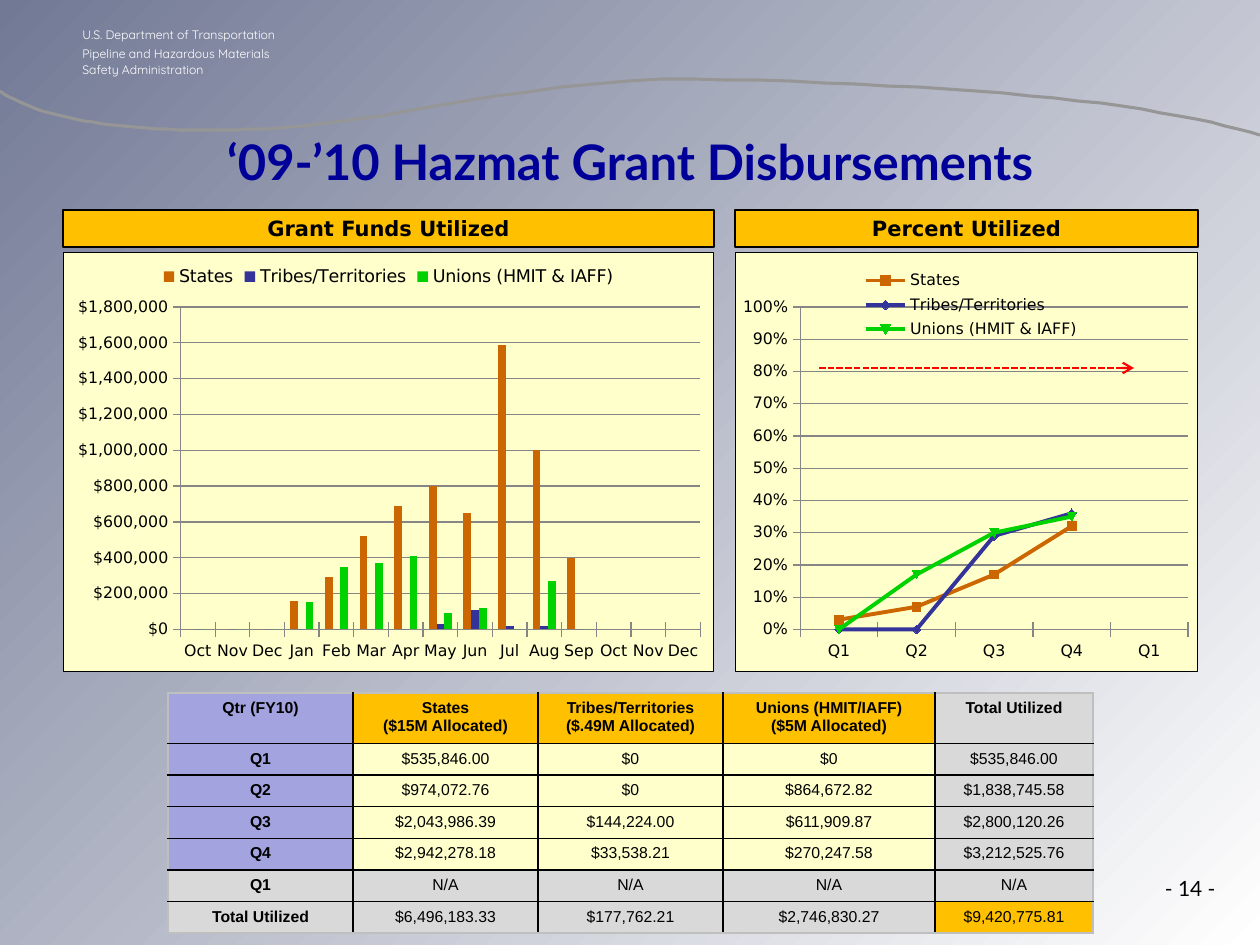
from dataclasses import dataclass
from typing import Optional

from lxml import etree
from pptx import Presentation
from pptx.chart.data import CategoryChartData
from pptx.dml.color import RGBColor
from pptx.enum.chart import XL_CHART_TYPE, XL_LEGEND_POSITION, XL_MARKER_STYLE, XL_TICK_MARK
from pptx.enum.dml import MSO_LINE
from pptx.enum.shapes import MSO_CONNECTOR, MSO_SHAPE
from pptx.enum.text import MSO_ANCHOR, PP_ALIGN
from pptx.oxml import parse_xml
from pptx.oxml.ns import nsdecls, qn
from pptx.util import Emu, Pt

PX = 914400 / 126
COLUMNS, LINES = XL_CHART_TYPE.COLUMN_CLUSTERED, XL_CHART_TYPE.LINE_MARKERS
LEFT, CENTER, RIGHT = PP_ALIGN.LEFT, PP_ALIGN.CENTER, PP_ALIGN.RIGHT
TOP, MIDDLE, BOTTOM = MSO_ANCHOR.TOP, MSO_ANCHOR.MIDDLE, MSO_ANCHOR.BOTTOM
RECTANGLE = MSO_SHAPE.RECTANGLE
LEGEND_TOP = XL_LEGEND_POSITION.TOP
AUTO_MARKER = XL_MARKER_STYLE.AUTOMATIC
CROSS = XL_TICK_MARK.CROSS
SHORT_DASH = MSO_LINE.SQUARE_DOT

BLACK = RGBColor(0x00, 0x00, 0x00)
WHITE = RGBColor(0xFF, 0xFF, 0xFF)
SLATE = RGBColor(0x72, 0x79, 0x95)
CURVE_GREY = RGBColor(0x96, 0x96, 0x96)
GRID_GREY = RGBColor(0x86, 0x86, 0x86)
EDGE_GREY = RGBColor(0xBF, 0xBF, 0xBF)
NAVY = RGBColor(0x00, 0x00, 0x99)
GOLD = RGBColor(0xFF, 0xC0, 0x00)
CREAM = RGBColor(0xFF, 0xFF, 0xCC)
LILAC = RGBColor(0xA3, 0xA3, 0xE0)
PALE_GREY = RGBColor(0xD9, 0xD9, 0xD9)
RED = RGBColor(0xFF, 0x00, 0x00)
ORANGE = RGBColor(0xCC, 0x66, 0x00)
INDIGO = RGBColor(0x33, 0x33, 0x99)
GREEN = RGBColor(0x00, 0xD2, 0x00)

RECIPIENTS = [("States", ORANGE), ("Tribes/Territories", INDIGO), ("Unions (HMIT & IAFF)", GREEN)]
CURVE_START = (0, 91)
CURVE = [
    ((14, 102), (49, 115), (84, 121)), ((120, 127), (170, 131), (212, 130)),
    ((253, 129), (258, 131), (336, 122)), ((415, 113), (564, 77), (694, 79)),
    ((823, 81), (959, 88), (1055, 98)), ((1150, 108), (1222, 123), (1260, 135)),
]
CURVE_STEPS = 12

TABLE_LEFT, TABLE_TOP = 168, 693
COLUMN_WIDTHS = [185, 185, 185, 212, 158]
HEADER_HEIGHT, ROW_HEIGHT = 49, 30
TABLE_ROWS = [
    ["Qtr (FY10)", "States\n($15M Allocated)", "Tribes/Territories ($.49M Allocated)",
     "Unions (HMIT/IAFF)\n($5M Allocated)", "Total Utilized"],
    ["Q1", "$535,846.00", "$0", "$0", "$535,846.00"],
    ["Q2", "$974,072.76", "$0", "$864,672.82", "$1,838,745.58"],
    ["Q3", "$2,043,986.39", "$144,224.00", "$611,909.87", "$2,800,120.26"],
    ["Q4", "$2,942,278.18", "$33,538.21", "$270,247.58", "$3,212,525.76"],
    ["Q1", "N/A", "N/A", "N/A", "N/A"],
    ["Total Utilized", "$6,496,183.33", "$177,762.21", "$2,746,830.27", "$9,420,775.81"],
]


@dataclass
class Style:
    font: str
    size: float
    color: RGBColor = BLACK
    bold: bool = False


@dataclass
class Panel:
    heading: str
    left: int
    width: int
    kind: XL_CHART_TYPE
    categories: list
    values: list
    maximum: float
    step: float
    number_format: str
    legend_size: int
    plot_area: tuple
    legend_area: Optional[tuple] = None


PANELS = [
    Panel("Grant Funds Utilized", 63, 651, COLUMNS,
          "Oct Nov Dec Jan Feb Mar Apr May Jun Jul Aug Sep Oct Nov Dec".split(),
          [[0, 0, 0, 160000, 290000, 520000, 690000, 800000, 650000, 1590000, 1000000, 400000]
           + [None] * 3,
           [0] * 7 + [30000, 110000, 20000, 20000, 0] + [None] * 3,
           [0, 0, 0, 150000, 350000, 370000, 410000, 90000, 120000, 0, 270000, 0] + [None] * 3],
          1800000, 200000, '"$"#,##0', 10, (115, 56, 523, 324)),
    Panel("Percent Utilized", 735, 463, LINES, ["Q1", "Q2", "Q3", "Q4", "Q1"],
          [[0.03, 0.07, 0.17, 0.32, None], [0, 0, 0.29, 0.36, None], [0, 0.17, 0.3, 0.35, None]],
          1, 0.1, "0%", 9, (66, 55, 387, 325), (126, 14, 220, 78)),
]
HEADING_TOP, HEADING_HEIGHT = 210, 37
CHART_TOP, CHART_HEIGHT = 252, 420


def px(*lengths: float) -> list:
    return [Emu(round(length * PX)) for length in lengths]


def write(frame, text: str, style: Style, align=LEFT, anchor=TOP) -> None:
    frame.word_wrap = True
    frame.vertical_anchor = anchor
    for index, line in enumerate(text.split("\n")):
        paragraph = frame.paragraphs[0] if index == 0 else frame.add_paragraph()
        paragraph.alignment = align
        for part, piece in enumerate(line.split("\v")):
            if part:
                paragraph.add_line_break()
            run = paragraph.add_run()
            run.text = piece
            run.font.name, run.font.size = style.font, Pt(style.size)
            run.font.bold, run.font.color.rgb = style.bold, style.color


def add_text(slide, box: tuple, text: str, style: Style, align=LEFT, anchor=TOP):
    frame = slide.shapes.add_textbox(*px(*box)).text_frame
    write(frame, text, style, align, anchor)
    return frame


def add_backdrop(slide) -> None:
    backdrop = slide.shapes.add_shape(RECTANGLE, *px(0, 0, 1260, 945))
    backdrop.shadow.inherit = False
    backdrop.line.fill.background()
    backdrop.fill.gradient()
    backdrop.fill.gradient_angle = 315
    for stop, color, position in zip(backdrop.fill.gradient_stops, (SLATE, WHITE), (0, 1)):
        stop.color.rgb, stop.position = color, position

    points, start = [], CURVE_START
    for first, second, end in CURVE:
        for step in range(1, CURVE_STEPS + 1):
            t = step / CURVE_STEPS
            u = 1 - t
            points.append(tuple(
                u ** 3 * a + 3 * u * u * t * b + 3 * u * t * t * c + t ** 3 * d
                for a, b, c, d in zip(start, first, second, end)))
        start = end
    builder = slide.shapes.build_freeform(*CURVE_START, scale=PX)
    builder.add_line_segments(points, close=False)
    wave = builder.convert_to_shape()
    wave.shadow.inherit = False
    wave.fill.background()
    wave.line.color.rgb, wave.line.width = CURVE_GREY, Pt(1.75)


def set_layout(parent, area: tuple, panel: Panel, inner: bool) -> None:
    for old in parent.findall(qn("c:layout")):
        parent.remove(old)
    target = '<c:layoutTarget val="inner"/>' if inner else ""
    modes = '<c:xMode val="edge"/><c:yMode val="edge"/>'
    sizes = (panel.width, CHART_HEIGHT) * 2
    values = "".join(f'<c:{name} val="{length / size:.2f}"/>'
                     for name, length, size in zip("xywh", area, sizes))
    layout = parse_xml(f'<c:layout {nsdecls("c")}><c:manualLayout>{target}{modes}{values}'
                       '</c:manualLayout></c:layout>')
    if inner:
        parent.insert(0, layout)
    else:
        parent.find(qn("c:legendPos")).addnext(layout)


def add_panel(slide, panel: Panel) -> None:
    heading = slide.shapes.add_shape(
        RECTANGLE, *px(panel.left, HEADING_TOP, panel.width, HEADING_HEIGHT))
    heading.shadow.inherit = False
    heading.fill.solid()
    heading.fill.fore_color.rgb = GOLD
    heading.line.color.rgb, heading.line.width = BLACK, Pt(0.75)
    write(heading.text_frame, panel.heading, Style("DejaVu Sans", 12, bold=True), CENTER, BOTTOM)

    data = CategoryChartData()
    data.categories = panel.categories
    for (name, _), values in zip(RECIPIENTS, panel.values):
        data.add_series(name, values)
    chart = slide.shapes.add_chart(
        panel.kind, *px(panel.left, CHART_TOP, panel.width, CHART_HEIGHT), data).chart
    chart.has_title = False
    chart.font.name, chart.font.size, chart.font.color.rgb = "DejaVu Sans", Pt(9), BLACK
    chart.element.find(qn("c:txPr")).addprevious(parse_xml(
        f'<c:spPr {nsdecls("c", "a")}><a:solidFill><a:srgbClr val="{CREAM}"/></a:solidFill>'
        f'<a:ln w="9525"><a:solidFill><a:srgbClr val="{BLACK}"/></a:solidFill></a:ln></c:spPr>'))
    chart.has_legend = True
    chart.legend.position = LEGEND_TOP
    chart.legend.include_in_layout = panel.legend_area is not None
    chart.legend.font.size = Pt(panel.legend_size)
    set_layout(chart.element.find(".//" + qn("c:plotArea")), panel.plot_area, panel, True)
    if panel.legend_area:
        set_layout(chart.element.find(".//" + qn("c:legend")), panel.legend_area, panel, False)

    amounts = chart.value_axis
    amounts.minimum_scale, amounts.maximum_scale = 0, panel.maximum
    amounts.major_unit = panel.step
    amounts.tick_labels.number_format = panel.number_format
    amounts.tick_labels.number_format_is_linked = False
    amounts.major_gridlines.format.line.color.rgb = GRID_GREY
    for axis in (amounts, chart.category_axis):
        axis.major_tick_mark = CROSS
        axis.format.line.color.rgb = GRID_GREY
        axis.tick_labels.font.size = Pt(9)

    plot = chart.plots[0]
    plot.vary_by_categories = False
    if panel.kind == COLUMNS:
        plot.gap_width, plot.overlap = 150, 0
    for series, (_, color) in zip(plot.series, RECIPIENTS):
        fills = [series.format.fill]
        if panel.kind == LINES:
            series.smooth = False
            series.format.line.color.rgb, series.format.line.width = color, Pt(2.25)
            series.marker.style, series.marker.size = AUTO_MARKER, 5
            series.marker.format.line.color.rgb = color
            fills = [series.marker.format.fill]
        for fill in fills:
            fill.solid()
            fill.fore_color.rgb = color


def cell_color(row: int, column: int) -> RGBColor:
    last_row, last_column = len(TABLE_ROWS) - 1, len(COLUMN_WIDTHS) - 1
    if (row, column) == (last_row, last_column):
        return GOLD
    if column == last_column or row >= last_row - 1:
        return PALE_GREY
    if column == 0:
        return LILAC
    return GOLD if row == 0 else CREAM


def set_borders(cell, outer_sides: dict) -> None:
    properties = cell._tc.get_or_add_tcPr()
    for index, (side, outer) in enumerate(outer_sides.items()):
        color = EDGE_GREY if outer else BLACK
        properties.insert(index, parse_xml(
            f'<a:{side} {nsdecls("a")} w="12700"><a:solidFill><a:srgbClr val="{color}"/>'
            f'</a:solidFill></a:{side}>'))


def add_grant_table(slide) -> None:
    heights = [HEADER_HEIGHT] + [ROW_HEIGHT] * (len(TABLE_ROWS) - 1)
    table = slide.shapes.add_table(
        len(heights), len(COLUMN_WIDTHS),
        *px(TABLE_LEFT, TABLE_TOP, sum(COLUMN_WIDTHS), sum(heights))).table
    table.first_row = table.horz_banding = False
    for column, width in zip(table.columns, px(*COLUMN_WIDTHS)):
        column.width = width
    for r, (values, height) in enumerate(zip(TABLE_ROWS, px(*heights))):
        table.rows[r].height = height
        for c, value in enumerate(values):
            cell = table.cell(r, c)
            write(cell.text_frame, value, Style("Arial", 9, bold=r == 0 or c == 0), CENTER)
            cell.fill.solid()
            cell.fill.fore_color.rgb = cell_color(r, c)
            set_borders(cell, {"lnL": c == 0, "lnR": c == len(values) - 1,
                               "lnT": r == 0, "lnB": r == len(heights) - 1})


def add_target_arrow(slide) -> None:
    arrow = slide.shapes.add_connector(MSO_CONNECTOR.STRAIGHT, *px(819, 368, 1134, 368))
    arrow.line.color.rgb, arrow.line.width = RED, Pt(1.25)
    arrow.line.dash_style = SHORT_DASH
    properties = arrow.element.spPr
    etree.SubElement(properties.find(qn("a:ln")), qn("a:tailEnd"), type="arrow")
    etree.SubElement(properties, qn("a:effectLst"))


def main() -> None:
    deck = Presentation()
    deck.slide_width, deck.slide_height = px(1260, 945)
    slide = deck.slides.add_slide(deck.slide_layouts[6])
    add_backdrop(slide)
    agency = add_text(
        slide, (70, 20, 219, 63),
        "U.S. Department of Transportation\n"
        "Pipeline and Hazardous Materials\vSafety Administration", Style("Quicksand", 7, WHITE))
    agency.word_wrap = False
    for paragraph in agency.paragraphs:
        paragraph.line_spacing = Pt(9)
    agency.paragraphs[1].space_before = Pt(2)
    add_text(slide, (63, 105, 1134, 111), "‘09-’10 Hazmat Grant Disbursements",
             Style("Lato", 28, NAVY, True), CENTER, MIDDLE)
    for panel in PANELS:
        add_panel(slide, panel)
    add_text(slide, (1092, 869, 136, 65), "- 14 -", Style("Lato", 12), RIGHT)
    add_grant_table(slide)
    add_target_arrow(slide)
    deck.save("out.pptx")


if __name__ == "__main__":
    main()
